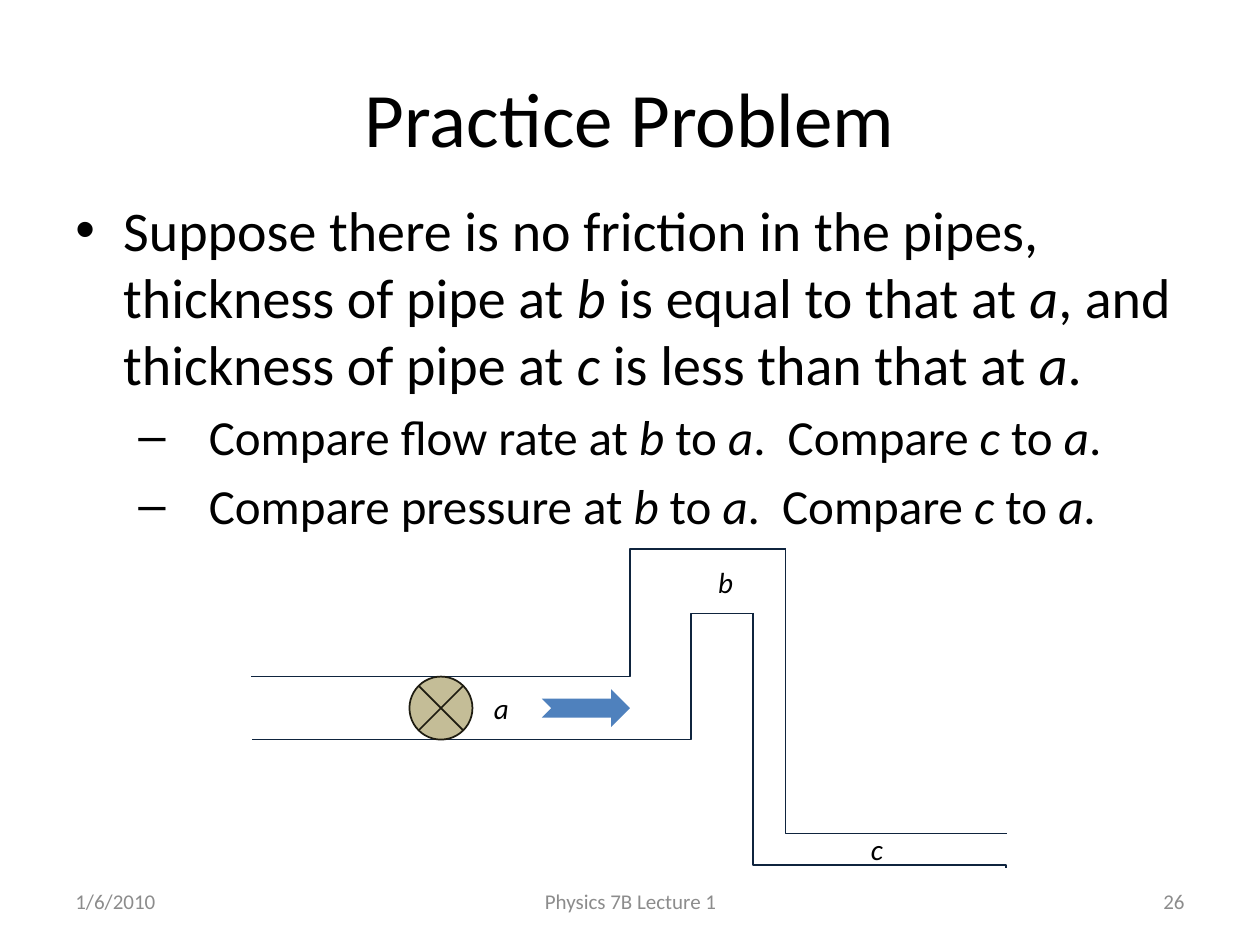
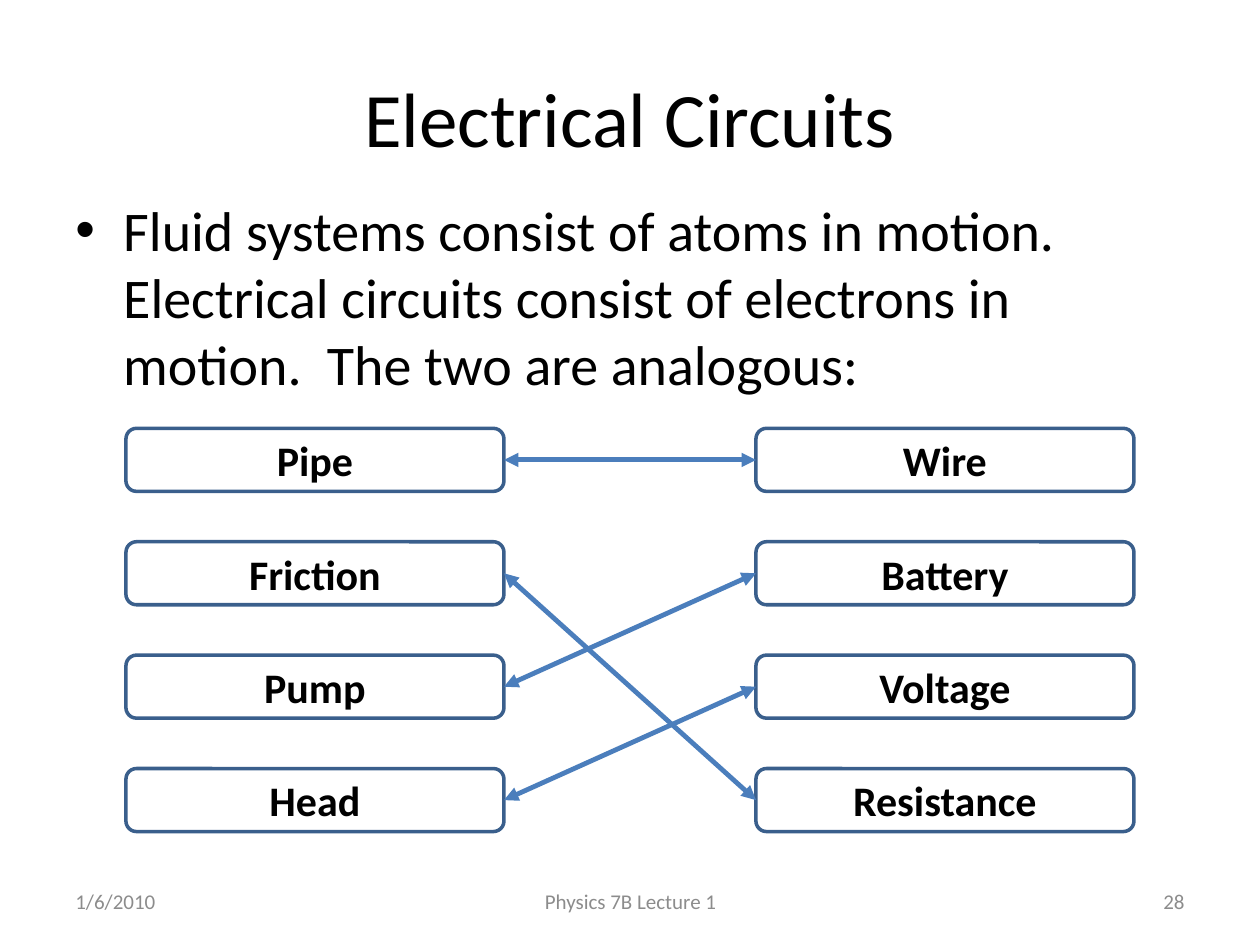
from pptx import Presentation
from pptx.dml.color import RGBColor
from pptx.enum.shapes import MSO_CONNECTOR as Connector, MSO_SHAPE as Shape
from pptx.enum.text import MSO_ANCHOR as Anchor, PP_ALIGN as Align
from pptx.oxml.ns import qn
from pptx.util import Pt
from lxml.etree import SubElement

PX = 9144  # EMU in one px, 100 px to the inch
FONT = "Calibri"
BLACK, GREY = "000000", "8C8C8C"
WALL, PUMP_FILL, PUMP_LINE = "0F243E", "C4BD97", "1E1C11"
FLOW, BOX_LINE, LINK = "4F81BD", "3A5F8C", "4B7EBC"
BULLETS = [  # one entry a level
    {"char": "•", "size": 32, "left": 38, "hang": 38},
    {"char": "–", "size": 28, "left": 106, "hang": 56},
]


def px(*lengths):
    return [length * PX for length in lengths]


def color(hex_string):
    return RGBColor.from_string(hex_string)


def set_format(target, values):
    for name, value in values.items():
        setattr(target, name, value)


def style_line(line, hex_string, width):
    line.color.rgb = color(hex_string)
    line.width = Pt(width)


def write(paragraph, text, size, hex_string=BLACK, bold=False, italic=False):
    """Fill the paragraph; words between asterisks switch the italics."""
    for index, piece in enumerate(text.split("*")):
        run = paragraph.add_run()
        run.text = piece
        set_format(run.font, {"name": FONT, "size": Pt(size), "bold": bold,
                              "italic": italic != bool(index % 2)})
        run.font.color.rgb = color(hex_string)


def add_text(slide, box, text, size, hex_string=BLACK, align=Align.CENTER):
    frame = slide.shapes.add_textbox(*px(*box)).text_frame
    set_format(frame, {"word_wrap": True, "vertical_anchor": Anchor.MIDDLE})
    frame.paragraphs[0].alignment = align
    write(frame.paragraphs[0], text, size, hex_string)


def add_bullets(slide, height, items):
    frame = slide.shapes.add_textbox(*px(50, 150, 900, height)).text_frame
    frame.word_wrap = True
    for index, (level, text) in enumerate(items):
        bullet = BULLETS[level]
        paragraph = frame.add_paragraph() if index else frame.paragraphs[0]
        set_format(paragraph, {"level": level, "space_before": Pt(bullet["size"] * 0.2)})
        properties = paragraph._p.get_or_add_pPr()
        properties.set("marL", str(bullet["left"] * PX))
        properties.set("indent", str(-bullet["hang"] * PX))
        SubElement(properties, qn("a:buFont"), typeface="Arial")
        SubElement(properties, qn("a:buChar"), char=bullet["char"])
        write(paragraph, text, bullet["size"])


def add_shape(slide, kind, box, fill=None, line=None, width=1):
    shape = slide.shapes.add_shape(kind, *px(*box))
    shape.shadow.inherit = False
    if fill:
        shape.fill.solid()
        shape.fill.fore_color.rgb = color(fill)
    else:
        shape.fill.background()
    if line:
        style_line(shape.line, line, width)
    else:
        shape.line.fill.background()
    return shape


def add_label(slide, box, text, size, bold=False, italic=False, **style):
    frame = add_shape(slide, Shape.ROUNDED_RECTANGLE, box, **style).text_frame
    frame.vertical_anchor = Anchor.MIDDLE
    frame.paragraphs[0].alignment = Align.CENTER
    write(frame.paragraphs[0], text, size, bold=bold, italic=italic)


def add_line(slide, start, end, hex_string, width, kind=Connector.STRAIGHT, tips=()):
    line = slide.shapes.add_connector(kind, *px(*start, *end))
    style_line(line.line, hex_string, width)
    for tip in tips:
        SubElement(line.line._get_or_add_ln(), qn(tip), type="triangle")
    SubElement(line._element.spPr, qn("a:effectLst"))
    return line


def add_elbow(slide, start, end, bend, upright=False):
    """Bent wall, turning at the share bend of its run; upright ones start downwards."""
    if upright:
        run, rise = end[1] - start[1], end[0] - start[0]
        left = (start[0] + end[0] - run) // 2
        top = (start[1] + end[1] - rise) // 2
        start, end = (left + run, top), (left, top + rise)
    elbow = add_line(slide, start, end, WALL, 1, Connector.ELBOW)
    properties = elbow._element.spPr
    if upright:
        properties.find(qn("a:xfrm")).set("rot", str(270 * 60000))
    adjustments = properties.find(qn("a:prstGeom")).find(qn("a:avLst"))
    SubElement(adjustments, qn("a:gd"), name="adj1", fmla=f"val {round(bend * 100000)}")


def add_slide(presentation, title, number):
    slide = presentation.slides.add_slide(presentation.slide_layouts[6])
    add_text(slide, (50, 30, 900, 125), title, 44)
    for left, width, text, align in [
        (50, 233, "1/6/2010", Align.LEFT),
        (717, 233, number, Align.RIGHT),
        (342, 317, "Physics 7B Lecture 1", Align.CENTER),
    ]:
        add_text(slide, (left, 695, width, 40), text, 12, GREY, align)
    return slide


def add_pipe_diagram(slide):
    add_elbow(slide, (399, 537), (624, 436), 0.45)
    add_elbow(slide, (400, 587), (598, 487), 0.75)
    add_elbow(slide, (598, 487), (799, 689), 0.99, upright=True)
    add_elbow(slide, (624, 437), (800, 662), 1, upright=True)
    add_line(slide, (399, 537), (199, 537), WALL, 1)
    add_line(slide, (400, 587), (200, 587), WALL, 1)
    add_shape(slide, Shape.FLOWCHART_SUMMING_JUNCTION, (325, 537, 50, 50),
              fill=PUMP_FILL, line=PUMP_LINE)
    for letter, left, top in [("a", 378, 542), ("b", 556, 442), ("c", 676, 654)]:
        add_label(slide, (left, top, 40, 40), letter, 16.6, italic=True)
    add_shape(slide, Shape.NOTCHED_RIGHT_ARROW, (430, 547, 70, 30), fill=FLOW)


def add_matching(slide, fluid_terms, circuit_terms, pairs):
    """Two columns of boxes with each pair of analogous terms joined."""
    left, right, width, height, top, pitch = 100, 600, 300, 50, 340, 90
    for column, terms in [(left, fluid_terms), (right, circuit_terms)]:
        for row, term in enumerate(terms):
            add_label(slide, (column, top + row * pitch, width, height), term, 24,
                      bold=True, line=BOX_LINE, width=2)
    middle = top + height // 2
    for fluid, circuit in pairs.items():
        add_line(slide,
                 (left + width, middle + fluid_terms.index(fluid) * pitch),
                 (right, middle + circuit_terms.index(circuit) * pitch),
                 LINK, 2.75, tips=("a:headEnd", "a:tailEnd"))


def main():
    presentation = Presentation()
    set_format(presentation, {"slide_width": 1000 * PX, "slide_height": 750 * PX})

    problem = add_slide(presentation, "Practice Problem", "26")
    add_bullets(problem, 270, [
        (0, "Suppose there is no friction in the pipes, thickness of pipe at *b* is equal "
            "to that at *a*, and thickness of pipe at *c* is less than that at *a*."),
        (1, "Compare flow rate at *b* to *a*.  Compare *c* to *a*."),
        (1, "Compare pressure at *b* to *a*.  Compare *c* to *a*."),
    ])
    add_pipe_diagram(problem)

    circuits = add_slide(presentation, "Electrical Circuits", "28")
    add_bullets(circuits, 174, [
        (0, "Fluid systems consist of atoms in motion.  Electrical circuits consist of "
            "electrons in motion.  The two are analogous:"),
    ])
    add_matching(circuits,
                 ["Pipe", "Friction", "Pump", "Head"],
                 ["Wire", "Battery", "Voltage", "Resistance"],
                 {"Pipe": "Wire", "Friction": "Resistance",
                  "Pump": "Battery", "Head": "Voltage"})

    presentation.save("out.pptx")


if __name__ == "__main__":
    main()
